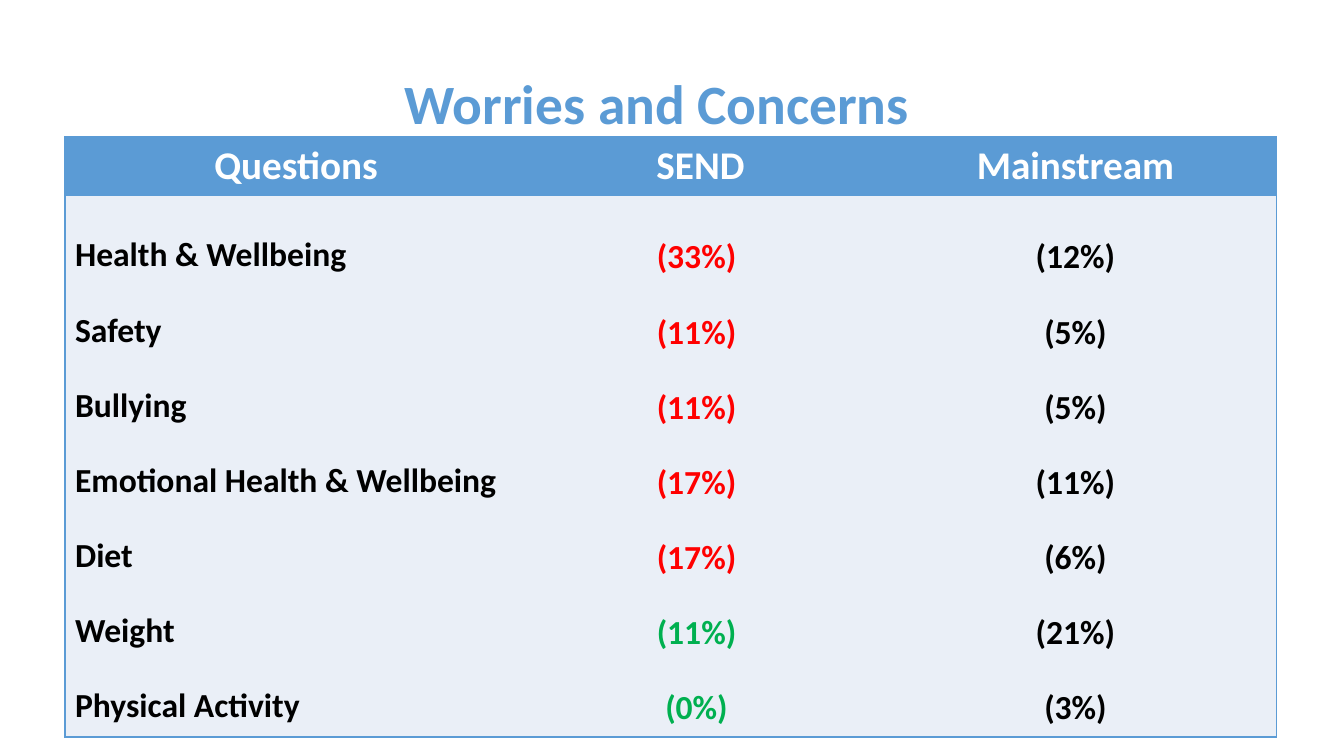
from lxml import etree
from pptx import Presentation
from pptx.dml.color import RGBColor
from pptx.enum.text import MSO_ANCHOR as Anchor, MSO_AUTO_SIZE as AutoSize, PP_ALIGN as Align
from pptx.oxml.ns import qn
from pptx.util import Emu, Pt

BLUE, PALE, WHITE, BLACK = "5B9BD5", "EAEFF7", "FFFFFF", "000000"
RED, GREEN = "FF0000", "00B050"


def px(count):
    return Emu(round(count * 914400 / 100.8))


def style(para, size, color, align):
    para.alignment = align
    para.font.name = "Calibri"
    para.font.size = Pt(size)
    para.font.bold = True
    para.font.color.rgb = RGBColor.from_string(color)


deck = Presentation()
deck.slide_width, deck.slide_height = px(1344), px(756)
page = deck.slides.add_slide(deck.slide_layouts[5])

# Title
title = page.shapes.title
title.left, title.top, title.width, title.height = px(17), px(76), px(1292), px(61)
frame = title.text_frame
frame.auto_size = AutoSize.NONE
frame.vertical_anchor = Anchor.MIDDLE
frame.margin_top = frame.margin_bottom = 0
frame.margin_right = px(22)
frame.text = "Worries and Concerns"
frame.paragraphs[0].line_spacing = 0.9
style(frame.paragraphs[0], 39.6, BLUE, Align.CENTER)

# Table contents: heading, alignment, top margin, right margin, lines with colours
questions = ["Health & Wellbeing", "Safety", "Bullying", "Emotional Health & Wellbeing",
             "Diet", "Weight", "Physical Activity"]
send = ["(33%)", "(11%)", "(11%)", "(17%)", "(17%)", "(11%)", "(0%)"]
mainstream = ["(12%)", "(5%)", "(5%)", "(11%)", "(6%)", "(21%)", "(3%)"]
columns = [
    ("Questions", Align.LEFT, 40, 10, questions, [BLACK] * 7),
    ("SEND", Align.CENTER, 42, 18, send, [RED] * 5 + [GREEN] * 2),
    ("Mainstream", Align.CENTER, 42, 10, mainstream, [BLACK] * 7),
]

table = page.shapes.add_table(2, 3, px(65), px(137), px(1212), px(600)).table
for column, width in zip(table.columns, (462, 347, 403)):
    column.width = px(width)
for row, height in zip(table.rows, (58, 542)):
    row.height = px(height)

# Outer borders and fills
for row_index, fill in enumerate((BLUE, PALE)):
    for column_index in range(3):
        cell = table.cell(row_index, column_index)
        visible = {"lnL": column_index == 0, "lnR": column_index == 2, "lnT": True, "lnB": True}
        properties = cell._tc.get_or_add_tcPr()
        for side, shown in visible.items():
            line = etree.SubElement(properties, qn(f"a:{side}"), w=str(Pt(1)))
            if shown:
                paint = etree.SubElement(line, qn("a:solidFill"))
                etree.SubElement(paint, qn("a:srgbClr"), val=BLUE)
            else:
                etree.SubElement(line, qn("a:noFill"))
        cell.fill.solid()
        cell.fill.fore_color.rgb = RGBColor.from_string(fill)

# Cell text
for index, (heading, align, top, right, lines, colors) in enumerate(columns):
    header, body = table.cell(0, index), table.cell(1, index)
    header.text = heading
    style(header.text_frame.paragraphs[0], 28, WHITE, Align.CENTER)
    body.vertical_anchor = Anchor.TOP
    body.margin_top, body.margin_right, body.margin_bottom = px(top), px(right), 0
    body.text = "\n".join(lines)
    for number, (para, color) in enumerate(zip(body.text_frame.paragraphs, colors)):
        style(para, 24, color, align)
        para.space_before = Pt(24.4 if number else 0)

deck.save("out.pptx")
